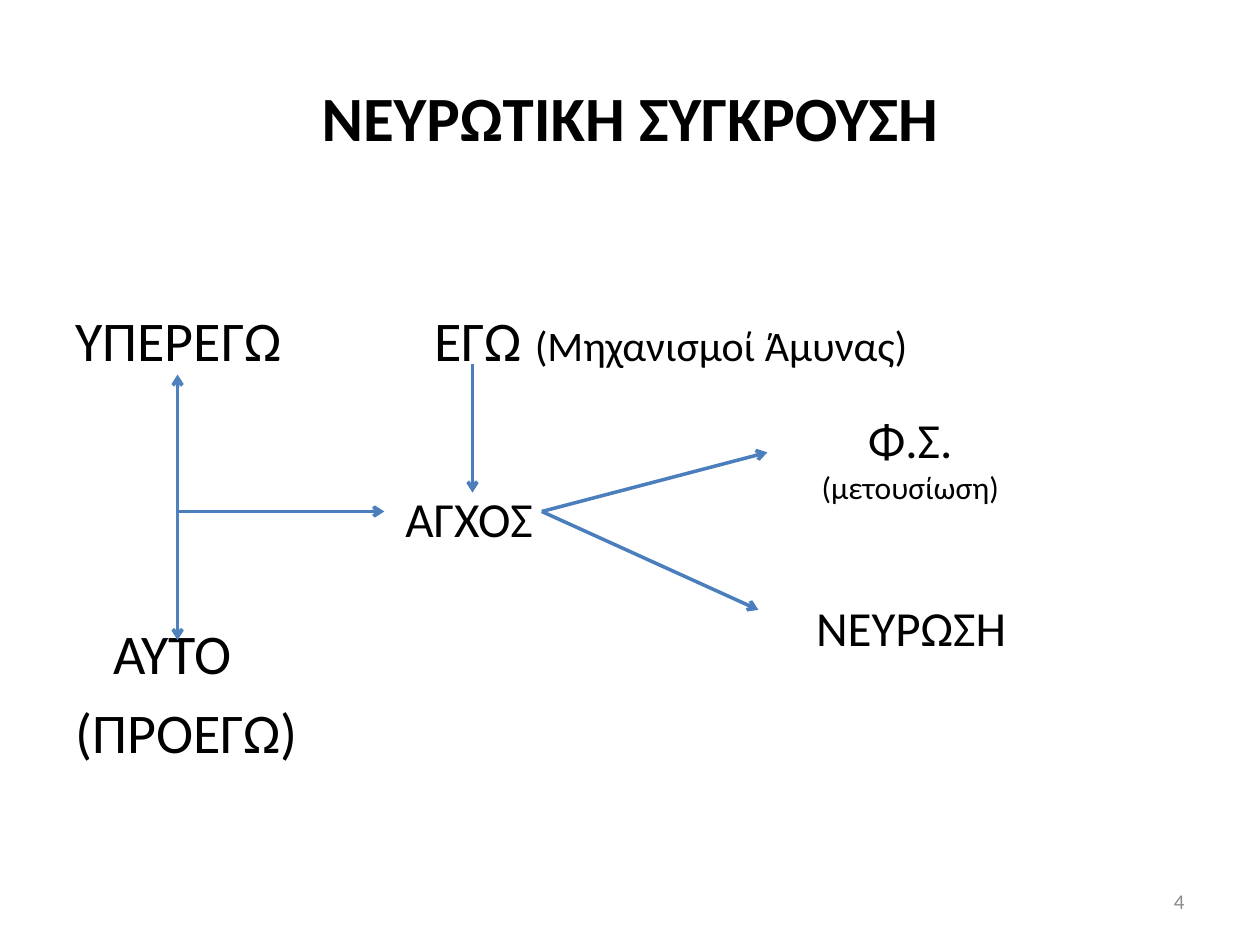
"""Build the slide on neurotic conflict: labels joined by arrows."""
from dataclasses import dataclass

from lxml import etree
from pptx import Presentation
from pptx import util as u
from pptx.dml import color
from pptx.enum import shapes, text
from pptx.oxml import ns

FONT = "Calibri"
BLACK, GREY, BLUE, DARK_BLUE = "000000", "8C8C8C", "4F81BD", "4B7EBC"
LEFT, CENTER, RIGHT = text.PP_ALIGN.LEFT, text.PP_ALIGN.CENTER, text.PP_ALIGN.RIGHT
TOP, MIDDLE = text.MSO_ANCHOR.TOP, text.MSO_ANCHOR.MIDDLE


@dataclass(frozen=True)
class Label:
    box: tuple
    lines: tuple
    align: text.PP_ALIGN = LEFT
    anchor: text.MSO_ANCHOR = TOP
    color: str = BLACK
    bold: bool = False


@dataclass(frozen=True)
class Arrow:
    start: tuple
    end: tuple
    color: str = DARK_BLUE
    double: bool = False


LABELS = (
    Label((36, 21.6, 648, 90), ((("ΝΕΥΡΩΤΙΚΗ ΣΥΓΚΡΟΥΣΗ", 36),),), CENTER, MIDDLE, bold=True),
    Label((36, 171, 160, 46), ((("ΥΠΕΡΕΓΩ", 32),),)),
    Label((241, 171, 300, 46), ((("ΕΓΩ ", 32), ("(Μηχανισμοί Άμυνας)", 24)),)),
    Label((57.6, 350, 110, 46), ((("ΑΥΤΟ", 32),),)),
    Label((36, 395, 160, 46), ((("(ΠΡΟΕΓΩ)", 32),),)),
    Label((224.6, 275.8, 157.7, 41), ((("ΑΓΧΟΣ", 28),),)),
    Label((438.5, 230.4, 163.4, 85), ((("Φ.Σ.", 28),), (("(μετουσίωση)", 18),)), CENTER),
    Label((427.7, 337.7, 185.8, 41), ((("ΝΕΥΡΩΣΗ", 28),),), CENTER),
    Label((516.2, 500.4, 167.8, 28.8), ((("4", 12),),), RIGHT, MIDDLE, GREY),
)
ANXIETY = (309.6, 292.3)
ARROWS = (
    Arrow((101.5, 214), (101.5, 365.8), BLUE, double=True),
    Arrow((101.5, 292.3), (219.6, 292.3)),
    Arrow((270, 208), (270, 281.5)),
    Arrow(ANXIETY, (438.5, 258.5)),
    Arrow(ANXIETY, (433.4, 348.5)),
)


def rgb(value: str) -> color.RGBColor:
    """Turn a hex string into a colour."""
    return color.RGBColor.from_string(value)


def draw_label(slide, label: Label) -> None:
    """Add a text box with one paragraph per line."""
    shape = slide.shapes.add_textbox(*map(u.Pt, label.box))
    frame = shape.text_frame
    frame.word_wrap = True
    frame.vertical_anchor = label.anchor
    frame.text = "\n".join(line[0][0] for line in label.lines)
    for paragraph, line in zip(frame.paragraphs, label.lines):
        paragraph.alignment = label.align
        for extra, _ in line[1:]:
            paragraph.add_run().text = extra
        for run, (_, size) in zip(paragraph.runs, line):
            run.font.name = FONT
            run.font.size = u.Pt(size)
            run.font.bold = label.bold
            run.font.color.rgb = rgb(label.color)


def draw_arrow(slide, arrow: Arrow) -> None:
    """Add a straight connector with open arrowheads."""
    connector = slide.shapes.add_connector(
        shapes.MSO_CONNECTOR.STRAIGHT, *map(u.Pt, arrow.start + arrow.end))
    connector.line.color.rgb = rgb(arrow.color)
    connector.line.width = u.Pt(2)
    line = connector.line._get_or_add_ln()
    for tag in ("a:headEnd", "a:tailEnd") if arrow.double else ("a:tailEnd",):
        etree.SubElement(line, ns.qn(tag), type="arrow")
    etree.SubElement(connector._element.spPr, ns.qn("a:effectLst"))


def main() -> None:
    """Draw all labels and arrows and save the presentation."""
    presentation = Presentation()
    presentation.slide_width, presentation.slide_height = u.Pt(720), u.Pt(540)
    slide = presentation.slides.add_slide(presentation.slide_layouts[6])
    for label in LABELS:
        draw_label(slide, label)
    for arrow in ARROWS:
        draw_arrow(slide, arrow)
    presentation.save("out.pptx")


if __name__ == "__main__":
    main()
